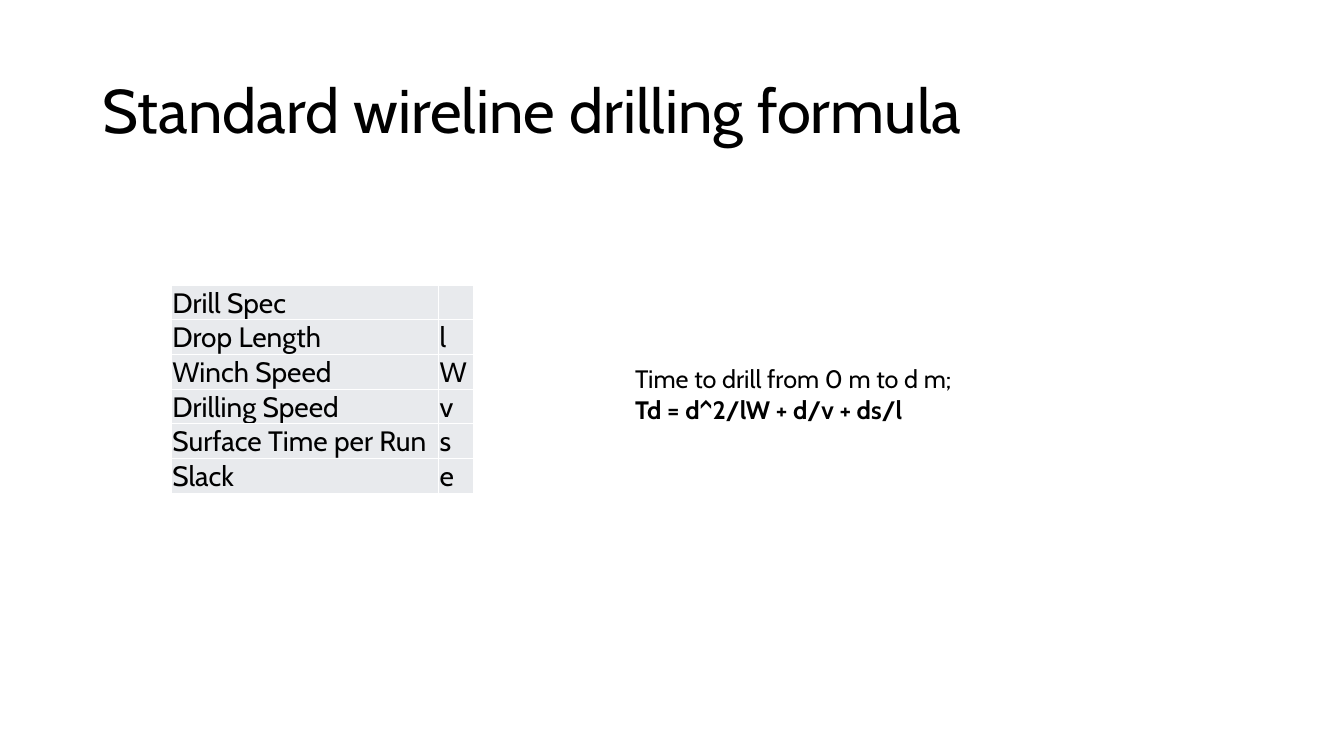
from lxml import etree
from pptx import Presentation
from pptx.dml.color import RGBColor
from pptx.enum.text import MSO_ANCHOR
from pptx.oxml.ns import qn
from pptx.util import Inches, Pt

MIDDLE = MSO_ANCHOR.MIDDLE
TOP = MSO_ANCHOR.TOP
BOTTOM = MSO_ANCHOR.BOTTOM
FONT = "Cabin"
COLORS = {"text": "000000", "cell": "E8EAED", "border": "FFFFFF"}
DRILL_SPEC = [
    ("Drill Spec", ""),
    ("Drop Length", "l"),
    ("Winch Speed", "W"),
    ("Drilling Speed", "v"),
    ("Surface Time per Run", "s"),
    ("Slack", "e"),
]
COLUMN_WIDTHS = (2.65, 0.35)
ROW_HEIGHT = 0.34


def style_paragraph(paragraph, size, bold=False):
    """Set the font of a paragraph."""
    font = paragraph.font
    font.name = FONT
    font.size = Pt(size)
    font.bold = bold
    font.color.rgb = RGBColor.from_string(COLORS["text"])


def add_text(slide, left, top, width, height, lines, size, anchor=TOP, spacing=None):
    """Add a text box from (text, bold) lines."""
    box = slide.shapes.add_textbox(Inches(left), Inches(top), Inches(width), Inches(height))
    frame = box.text_frame
    frame.word_wrap = True
    frame.vertical_anchor = anchor
    frame.text = "\n".join(text for text, _ in lines)
    for paragraph, (_, bold) in zip(frame.paragraphs, lines):
        style_paragraph(paragraph, size, bold)
        paragraph.line_spacing = spacing


def add_borders(cell):
    """Draw a thin border on all four sides of a cell."""
    properties = cell._tc.get_or_add_tcPr()
    for side in ("a:lnL", "a:lnR", "a:lnT", "a:lnB"):
        line = etree.SubElement(properties, qn(side), w=str(Pt(1)))
        fill = etree.SubElement(line, qn("a:solidFill"))
        etree.SubElement(fill, qn("a:srgbClr"), val=COLORS["border"])


def fill_cell(cell, text):
    """Write and format one table cell."""
    cell.text = text
    cell.vertical_anchor = BOTTOM
    cell.margin_left = cell.margin_right = cell.margin_top = Inches(0.01)
    cell.margin_bottom = 0
    style_paragraph(cell.text_frame.paragraphs[0], 20)
    add_borders(cell)
    cell.fill.solid()
    cell.fill.fore_color.rgb = RGBColor.from_string(COLORS["cell"])


def add_spec_table(slide, left, top):
    """Add the table of drill parameters and their symbols."""
    table = slide.shapes.add_table(
        len(DRILL_SPEC), len(COLUMN_WIDTHS), Inches(left), Inches(top),
        Inches(sum(COLUMN_WIDTHS)), Inches(ROW_HEIGHT * len(DRILL_SPEC)),
    ).table
    table.first_row = False
    table.horz_banding = False
    for column, width in zip(table.columns, COLUMN_WIDTHS):
        column.width = Inches(width)
    for row, texts in zip(table.rows, DRILL_SPEC):
        row.height = Inches(ROW_HEIGHT)
        for cell, text in zip(row.cells, texts):
            fill_cell(cell, text)


def main():
    """Build and save the slide."""
    deck = Presentation()
    deck.slide_width = Inches(13.33)
    deck.slide_height = Inches(7.5)
    slide = deck.slides.add_slide(deck.slide_layouts[6])
    title = [("Standard wireline drilling formula", False)]
    formula = [
        ("Time to drill from 0 m to d m;", False),
        ("Td = d^2/lW + d/v + ds/l", True),
    ]
    add_text(slide, 0.92, 0.4, 11.5, 1.45, title, 44, MIDDLE, 0.9)
    add_spec_table(slide, 1.7, 2.83)
    add_text(slide, 6.2, 3.56, 3.45, 0.72, formula, 18)
    deck.save("out.pptx")


if __name__ == "__main__":
    main()
